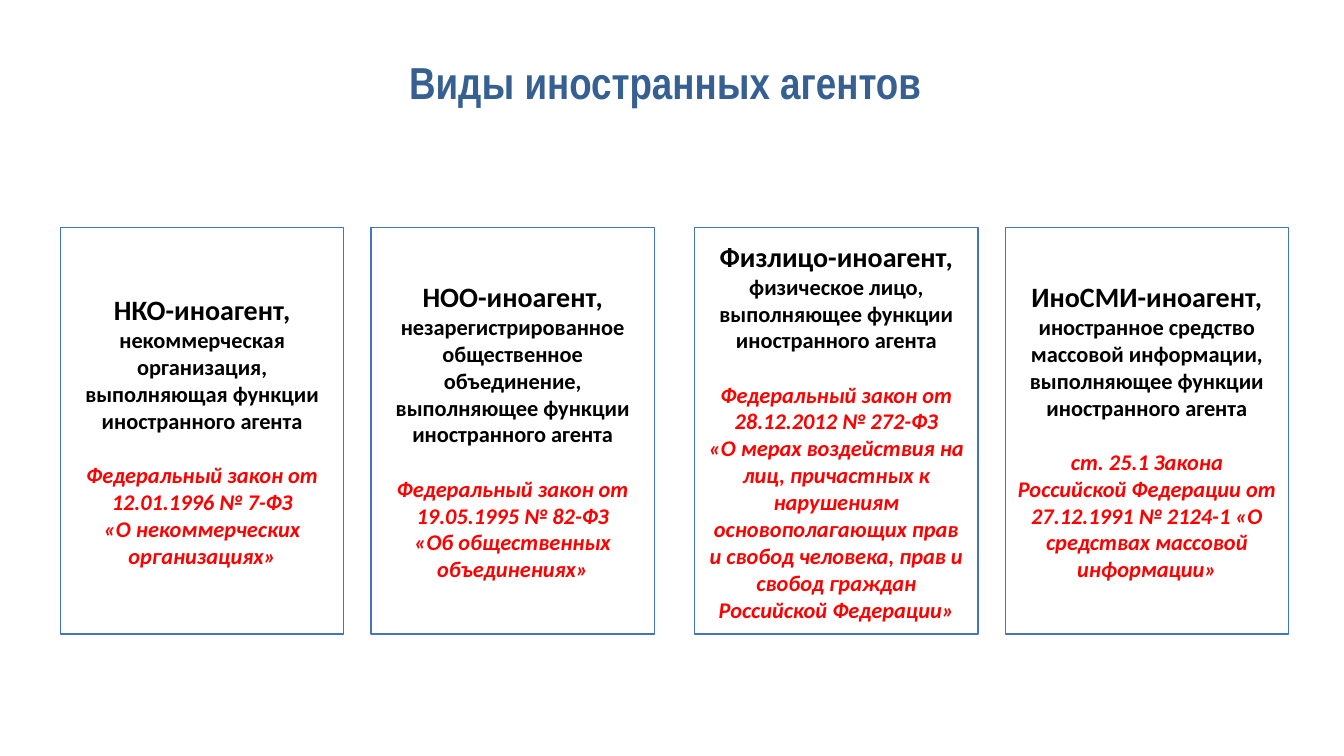
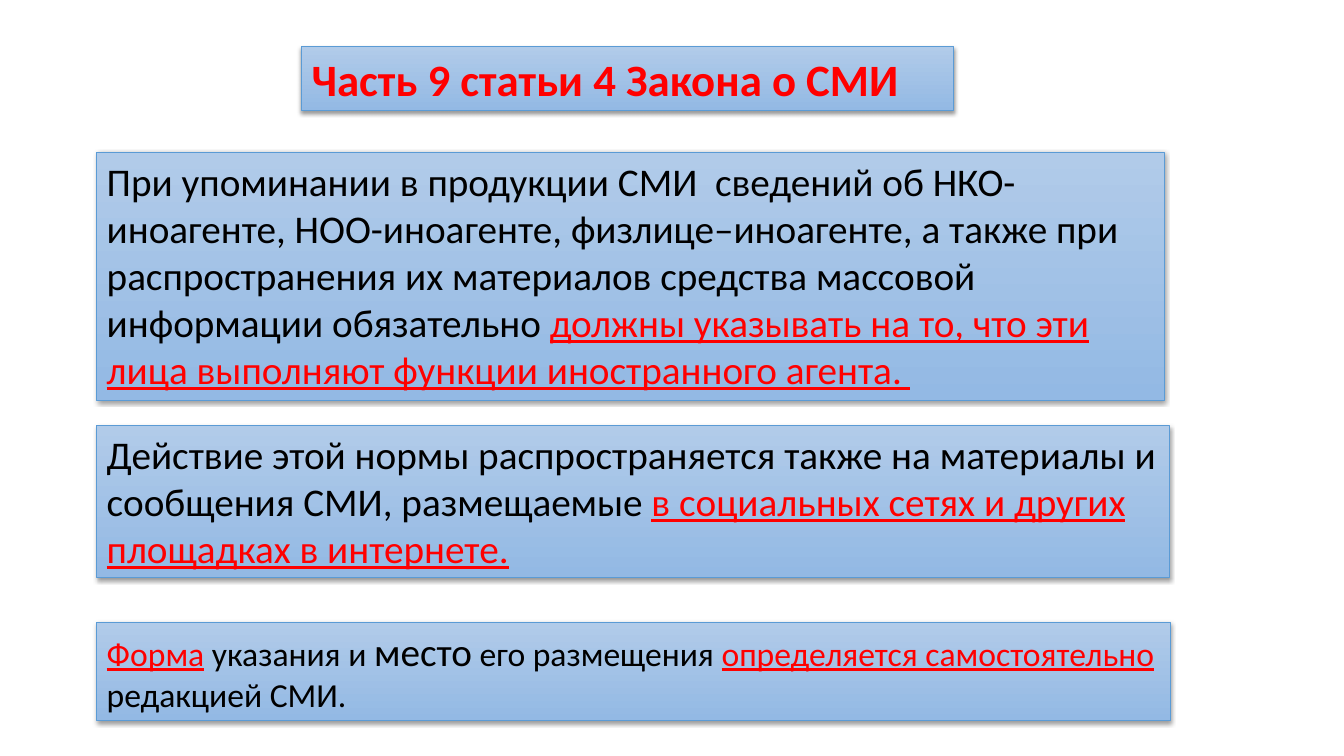
"""Build two slides on the kinds of foreign agents and the media law."""
from dataclasses import dataclass

from lxml.etree import SubElement
from pptx import Presentation
from pptx.dml.color import RGBColor
from pptx.enum.shapes import MSO_SHAPE
from pptx.enum.text import MSO_ANCHOR, MSO_AUTO_SIZE, PP_ALIGN
from pptx.oxml.ns import qn
from pptx.shapes.autoshape import Shape
from pptx.slide import Slide
from pptx.text.text import Font, TextFrame
from pptx.util import Inches, Pt


@dataclass(frozen=True)
class Theme:
    """Colours, fonts and type sizes of the deck."""
    white: str = "FFFFFF"
    black: str = "000000"
    red: str = "FF0000"
    title: str = "376092"
    edge: str = "4472C4"
    rim: str = "5B9BD5"
    light: str = "B1CBE9"
    deep: str = "93B9E4"
    face: str = "Calibri"
    narrow: str = "Arial Narrow"
    head: int = 32
    large: int = 28
    text: int = 24
    name: int = 20
    small: int = 16


@dataclass(frozen=True)
class Card:
    """One kind of agent with the law that defines it."""
    name: str
    role: str
    law: tuple[str, ...]


@dataclass(frozen=True)
class Span:
    """A stretch of text; marked text is red and underlined."""
    text: str
    mark: bool = False
    size: int | None = None


@dataclass(frozen=True)
class Panel:
    """A shaded box of running text."""
    top: float
    width: float
    height: float
    size: int
    spans: tuple[Span, ...]


THEME = Theme()

CARDS = (
    Card("НКО-иноагент,",
         "некоммерческая организация, выполняющая функции иностранного агента",
         ("Федеральный закон от 12.01.1996 № 7-ФЗ",
          "«О некоммерческих организациях»")),
    Card("НОО-иноагент,",
         "незарегистрированное общественное объединение, "
         "выполняющее функции иностранного агента",
         ("Федеральный закон от 19.05.1995 № 82-ФЗ",
          "«Об общественных объединениях»")),
    Card("Физлицо-иноагент,",
         "физическое лицо, выполняющее функции иностранного агента",
         ("Федеральный закон от 28.12.2012 № 272-ФЗ",
          "«О мерах воздействия на лиц, причастных к нарушениям "
          "основополагающих прав и свобод человека, прав и свобод "
          "граждан Российской Федерации»")),
    Card("ИноСМИ-иноагент,",
         "иностранное средство массовой информации, "
         "выполняющее функции иностранного агента",
         ("ст. 25.1 Закона Российской Федерации от 27.12.1991 № 2124-1 "
          "«О средствах массовой информации»",)),
)

PANELS = (
    Panel(1.51, 10.59, 2.46, THEME.large, (
        Span("При упоминании в продукции СМИ  сведений об НКО-иноагенте, "
             "НОО-иноагенте, физлице–иноагенте, а также при распространения "
             "их материалов средства массовой информации обязательно "),
        Span("должны указывать на то, что эти лица выполняют функции "
             "иностранного агента. ", True))),
    Panel(4.22, 10.64, 1.51, THEME.large, (
        Span("Действие этой нормы распространяется также на материалы и "
             "сообщения СМИ, размещаемые "),
        Span("в социальных сетях и других площадках в интернете.", True))),
    Panel(6.17, 10.65, 0.98, THEME.text, (
        Span("Форма", True),
        Span(" указания и "),
        Span("место", size=THEME.large),
        Span(" его размещения "),
        Span("определяется самостоятельно ", True),
        Span("редакцией СМИ."))),
)


def tint(code: str) -> RGBColor:
    """Turn a hex code into a colour."""
    return RGBColor.from_string(code)


def style(font: Font, size: int, code: str, face: str = THEME.face,
          bold: bool = False, slant: bool = False) -> None:
    """Set the whole look of a font."""
    font.name, font.size = face, Pt(size)
    font.bold, font.italic = bold, slant
    font.color.rgb = tint(code)


def place(shape: Shape, left: float, top: float,
          width: float, height: float) -> None:
    """Move and size a shape."""
    shape.left, shape.top = Inches(left), Inches(top)
    shape.width, shape.height = Inches(width), Inches(height)


def setup(frame: TextFrame, anchor: MSO_ANCHOR, side: float,
          edge: float) -> None:
    """Set wrap, anchor and insets of a text frame."""
    frame.word_wrap, frame.auto_size = True, MSO_AUTO_SIZE.NONE
    frame.vertical_anchor = anchor
    frame.margin_left = frame.margin_right = Inches(side)
    frame.margin_top = frame.margin_bottom = Inches(edge)


def add_box(slide: Slide, left: float, top: float,
            width: float, height: float) -> Shape:
    """Add a plain rectangle."""
    box = slide.shapes.add_shape(
        MSO_SHAPE.RECTANGLE, Inches(left), Inches(top),
        Inches(width), Inches(height))
    box.shadow.inherit = False
    return box


def shade(shape: Shape) -> None:
    """Give a shape the blue gradient, thin rim and soft shadow."""
    shape.fill.gradient()
    shape.fill.gradient_angle = 270
    for stop, code in zip(shape.fill.gradient_stops,
                          (THEME.light, THEME.deep)):
        stop.color.rgb = tint(code)
    shape.line.color.rgb = tint(THEME.rim)
    shape.line.width = Pt(0.5)
    shape.shadow.inherit = False
    glow = SubElement(
        shape.element.spPr.find(qn("a:effectLst")), qn("a:outerShdw"),
        blurRad=str(Pt(3.1)), dist=str(Pt(1.6)), dir="5400000",
        rotWithShape="0")
    hue = SubElement(glow, qn("a:srgbClr"), val=THEME.black)
    SubElement(hue, qn("a:alpha"), val="38000")
    setup(shape.text_frame, MSO_ANCHOR.TOP, 0.1, 0.05)


def set_title(slide: Slide, text: str, code: str, face: str,
              align: PP_ALIGN) -> Shape:
    """Fill and format the title placeholder."""
    title = slide.shapes.title
    title.text_frame.text = text
    line = title.text_frame.paragraphs[0]
    line.alignment = align
    style(line.font, THEME.head, code, face, bold=True)
    return title


def draw_card(slide: Slide, card: Card, left: float) -> None:
    """Draw one outlined card of an agent kind."""
    box = add_box(slide, left, 2.26, 2.81, 4.03)
    box.fill.solid()
    box.fill.fore_color.rgb = tint(THEME.white)
    box.line.color.rgb = tint(THEME.edge)
    box.line.width = Pt(1)
    frame = box.text_frame
    setup(frame, MSO_ANCHOR.MIDDLE, 0.12, 0.06)
    for rank, text in enumerate((card.name, card.role, *card.law)):
        line = frame.add_paragraph() if rank else frame.paragraphs[0]
        line.text = text
        line.alignment = PP_ALIGN.CENTER
        if rank == 2:
            line.space_before = Pt(19.5)
        law = rank > 1
        style(line.font, THEME.small if rank else THEME.name,
              THEME.red if law else THEME.black, bold=True, slant=law)


def draw_panel(slide: Slide, panel: Panel) -> None:
    """Draw one shaded panel with its marked text."""
    box = add_box(slide, 0.96, panel.top, panel.width, panel.height)
    shade(box)
    line = box.text_frame.paragraphs[0]
    line.alignment = PP_ALIGN.LEFT
    style(line.font, panel.size, THEME.black)
    for span in panel.spans:
        run = line.add_run()
        run.text = span.text
        run.font.size = Pt(span.size or panel.size)
        run.font.color.rgb = tint(THEME.red if span.mark else THEME.black)
        run.font.underline = span.mark


def draw_kinds(slide: Slide) -> None:
    """Draw the slide with two pairs of cards."""
    title = set_title(slide, "Виды иностранных агентов", THEME.title,
                      THEME.narrow, PP_ALIGN.CENTER)
    place(title, 0.6, 0.18, 12, 1.25)
    setup(title.text_frame, MSO_ANCHOR.MIDDLE, 0.12, 0.06)
    for rank, card in enumerate(CARDS):
        pair, side = divmod(rank, 2)
        draw_card(slide, card, 0.6 + 6.29 * pair + 3.08 * side)


def draw_rule(slide: Slide) -> None:
    """Draw the slide on the media law."""
    title = set_title(slide, "Часть 9 статьи 4 Закона о СМИ", THEME.red,
                      THEME.face, PP_ALIGN.LEFT)
    place(title, 2.99, 0.46, 6.47, 0.64)
    shade(title)
    for panel in PANELS:
        draw_panel(slide, panel)


def main() -> None:
    """Build and save the deck."""
    deck = Presentation()
    deck.slide_width, deck.slide_height = Inches(13.33), Inches(7.5)
    for draw in (draw_kinds, draw_rule):
        draw(deck.slides.add_slide(deck.slide_layouts[5]))
    deck.save("out.pptx")


if __name__ == "__main__":
    main()
